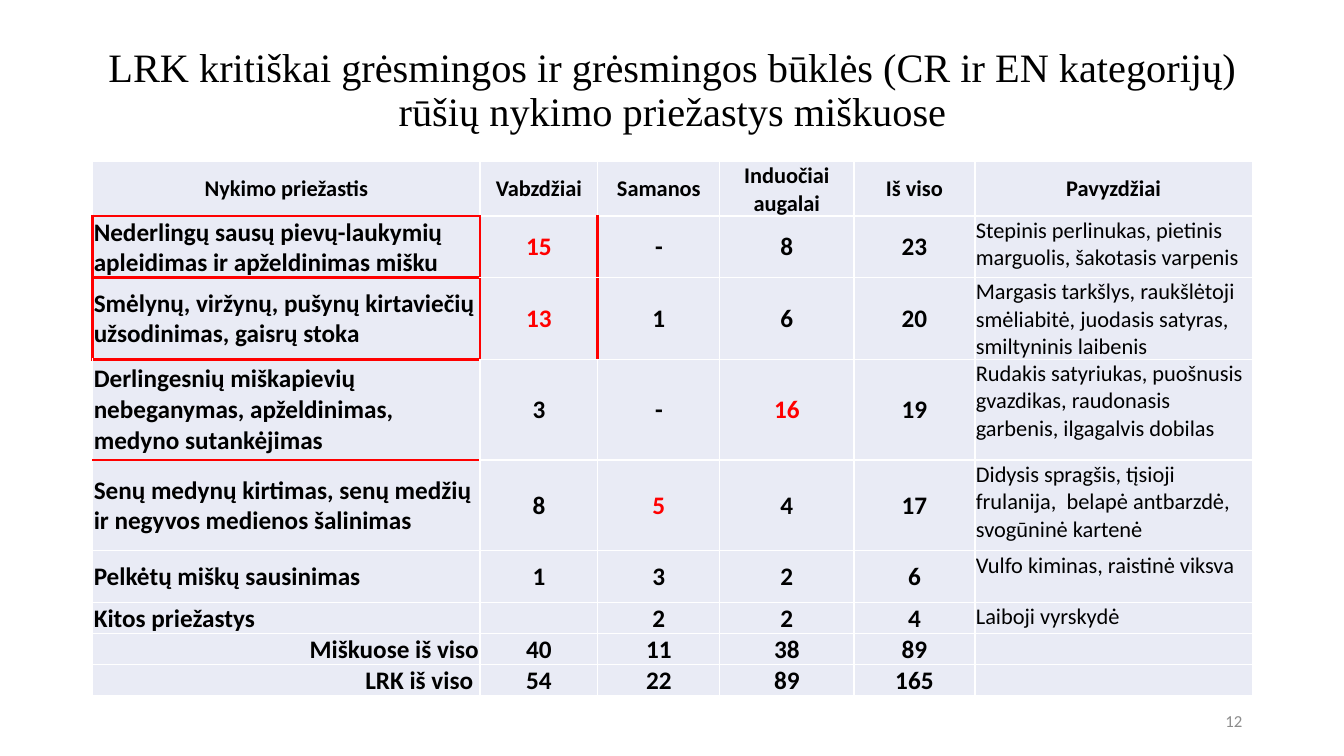
from lxml import etree
from pptx import Presentation
from pptx.dml.color import RGBColor
from pptx.enum import text as txt
from pptx.oxml.ns import qn
from pptx.util import Inches, Pt

BLACK, RED, WHITE, GREY, CELL_FILL = "000000", "FF0000", "FFFFFF", "8C8C8C", "E9EBF5"
LEFT, CENTER, RIGHT = txt.PP_ALIGN.LEFT, txt.PP_ALIGN.CENTER, txt.PP_ALIGN.RIGHT
TOP, MIDDLE, BOTTOM = txt.MSO_ANCHOR.TOP, txt.MSO_ANCHOR.MIDDLE, txt.MSO_ANCHOR.BOTTOM

COLUMN_WIDTHS = [3.84, 1.17, 1.21, 1.33, 1.2, 2.75]
ROW_HEIGHTS = [0.37, 0.6, 0.78, 1, 0.9, 0.51, 0.3, 0.3, 0.3]
CAUSES = [
    ["Nykimo priežastis", "Vabzdžiai", "Samanos", "Induočiai augalai", "Iš viso", "Pavyzdžiai"],
    ["Nederlingų sausų pievų-laukymių apleidimas ir apželdinimas mišku",
     "15", "-", "8", "23", "Stepinis perlinukas, pietinis marguolis, šakotasis varpenis"],
    ["Smėlynų, viržynų, pušynų kirtaviečių užsodinimas, gaisrų stoka",
     "13", "1", "6", "20",
     "Margasis tarkšlys, raukšlėtoji smėliabitė, juodasis satyras, smiltyninis laibenis"],
    ["Derlingesnių miškapievių nebeganymas, apželdinimas, medyno sutankėjimas",
     "3", "-", "16", "19",
     "Rudakis satyriukas, puošnusis gvazdikas, raudonasis garbenis, ilgagalvis dobilas"],
    ["Senų medynų kirtimas, senų medžių ir negyvos medienos šalinimas",
     "8", "5", "4", "17",
     "Didysis spragšis, tįsioji frulanija,  belapė antbarzdė, svogūninė kartenė"],
    ["Pelkėtų miškų sausinimas", "1", "3", "2", "6", "Vulfo kiminas, raistinė viksva"],
    ["Kitos priežastys", "", "2", "2", "4", "Laiboji vyrskydė"],
    ["Miškuose iš viso", "40", "11", "38", "89", ""],
    ["LRK iš viso ", "54", "22", "89", "165", ""],
]
FIRST_TOTAL = 7
EXAMPLES = 5
HIGHLIGHTS = {(1, 1), (2, 1), (3, 3), (4, 2)}
RED_VERTICALS = {(row, edge) for row in (1, 2) for edge in (0, 1, 2)}
RED_HORIZONTALS = {(edge, 0) for edge in (1, 2, 3, 4)}


def rgb(value):
    return RGBColor.from_string(value)


def write(frame, words, size=18, font="Calibri", color=BLACK, bold=False,
          align=LEFT, spacing=None):
    frame.word_wrap = True
    paragraph = frame.paragraphs[0]
    paragraph.alignment = align
    if spacing:
        paragraph.line_spacing = spacing
    if words:
        run = paragraph.add_run()
        run.text = words
        run.font.size, run.font.name, run.font.bold = Pt(size), font, bold
        run.font.color.rgb = rgb(color)


def add_text(slide, box, words, **style):
    frame = slide.shapes.add_textbox(*map(Inches, box)).text_frame
    frame.vertical_anchor = MIDDLE
    write(frame, words, **style)


def set_borders(cell, row, column):
    """Draw the four edges, red where the cell touches a marked edge."""
    edges = {
        "a:lnL": (row, column) in RED_VERTICALS,
        "a:lnR": (row, column + 1) in RED_VERTICALS,
        "a:lnT": (row, column) in RED_HORIZONTALS,
        "a:lnB": (row + 1, column) in RED_HORIZONTALS,
    }
    properties = cell._tc.get_or_add_tcPr()
    for position, (tag, marked) in enumerate(edges.items()):
        line = etree.Element(qn(tag), w=str(Pt(2.25 if marked else 1)))
        fill = etree.SubElement(line, qn("a:solidFill"))
        etree.SubElement(fill, qn("a:srgbClr"), val=RED if marked else WHITE)
        properties.insert(position, line)


def cell_style(row, column):
    """Return the anchor and the text format for a place in the table."""
    if row == 0:
        return MIDDLE, dict(size=16, bold=True, align=CENTER)
    if column == EXAMPLES:
        return TOP, dict(size=16)
    if column == 0:
        total = row >= FIRST_TOTAL
        return BOTTOM if total else MIDDLE, dict(bold=True, align=RIGHT if total else LEFT)
    color = RED if (row, column) in HIGHLIGHTS else BLACK
    return MIDDLE, dict(bold=True, align=CENTER, color=color)


def add_causes_table(slide, box):
    table = slide.shapes.add_table(len(CAUSES), len(COLUMN_WIDTHS), *map(Inches, box)).table
    table.first_row = table.horz_banding = False
    for column, width in zip(table.columns, COLUMN_WIDTHS):
        column.width = Inches(width)
    for row, height in zip(table.rows, ROW_HEIGHTS):
        row.height = Inches(height)
    for r, entries in enumerate(CAUSES):
        for c, words in enumerate(entries):
            cell = table.cell(r, c)
            cell.margin_left = cell.margin_right = cell.margin_top = Inches(0.01)
            cell.margin_bottom = 0
            cell.fill.solid()
            cell.fill.fore_color.rgb = rgb(CELL_FILL)
            cell.vertical_anchor, style = cell_style(r, c)
            write(cell.text_frame, words, **style)
            set_borders(cell, r, c)


def main():
    deck = Presentation()
    deck.slide_width, deck.slide_height = Inches(13.33), Inches(7.5)
    slide = deck.slides.add_slide(deck.slide_layouts[6])
    add_text(slide, (0.92, 0.4, 11.5, 1.01),
             "LRK kritiškai grėsmingos ir grėsmingos būklės (CR ir EN kategorijų) "
             "rūšių nykimo priežastys miškuose",
             size=28.8, font="Times New Roman", align=CENTER, spacing=0.9)
    add_causes_table(slide, (0.92, 1.6, sum(COLUMN_WIDTHS), sum(ROW_HEIGHTS)))
    add_text(slide, (9.42, 6.95, 3, 0.4), "12", size=12, color=GREY, align=RIGHT)
    deck.save("out.pptx")


if __name__ == "__main__":
    main()
